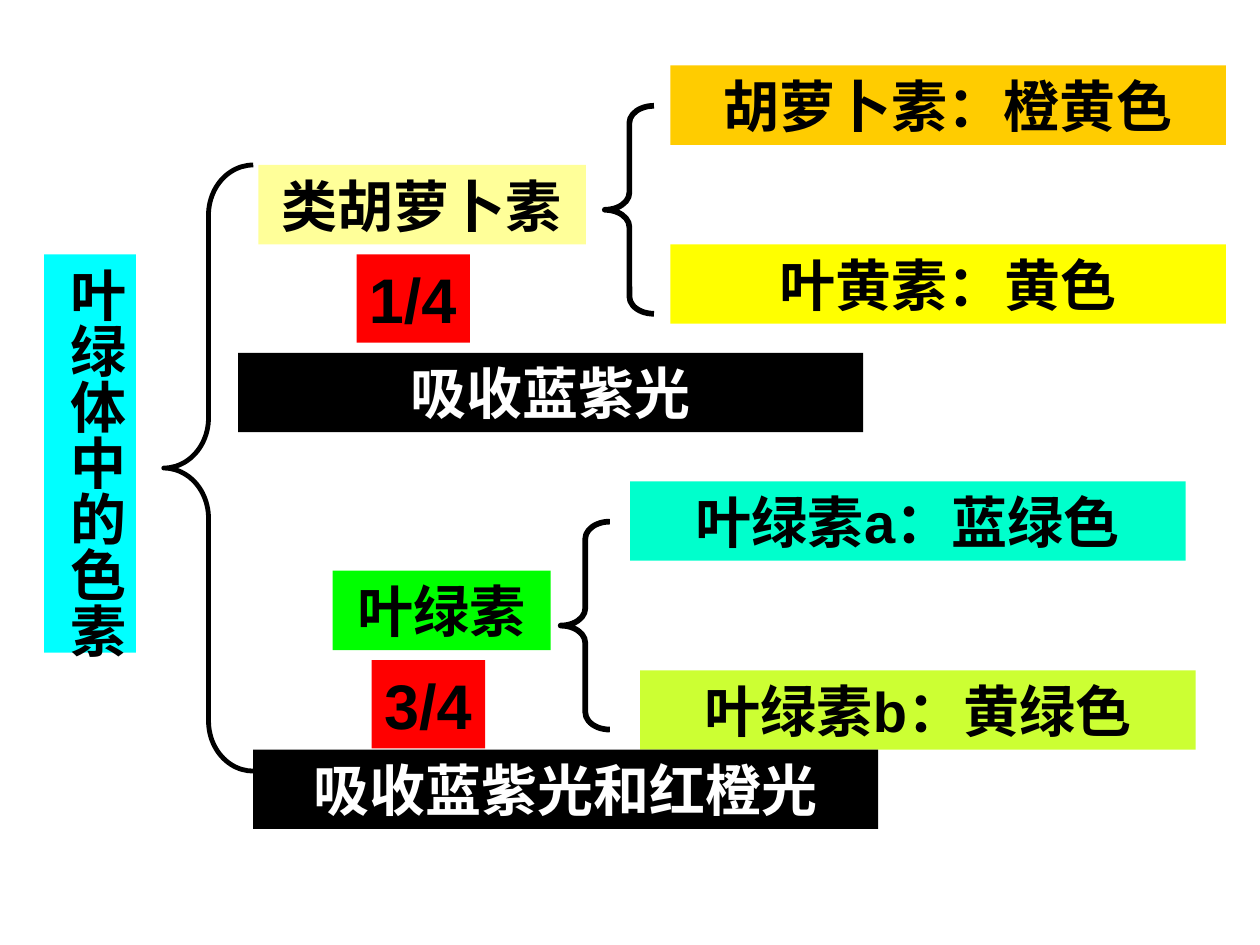
from pptx import Presentation
from pptx.dml.color import RGBColor
from pptx.enum.shapes import MSO_SHAPE as Shape
from pptx.enum.text import MSO_AUTO_SIZE as AutoSize, PP_ALIGN as Align
from pptx.util import Inches, Pt

COLUMNS, ROWS = 100, 75
BLACK, WHITE, RED = "000000", "FFFFFF", "FF0000"


def color(value):
    """Turn a hex string into a colour."""
    return RGBColor.from_string(value)


class PigmentSlide:
    """Hold the style and the current slide, placing elements on a grid."""

    font = "Arial"
    label_size = 32
    label_height = 6.3

    def __init__(self, deck):
        """Add a blank slide and work out the grid cell."""
        self.page = deck.slides.add_slide(deck.slide_layouts[6])
        self.cell_width = deck.slide_width / COLUMNS
        self.cell_height = deck.slide_height / ROWS

    def place(self, left, top, width, height):
        """Convert grid columns and rows to slide lengths."""
        return (round(left * self.cell_width), round(top * self.cell_height),
                round(width * self.cell_width), round(height * self.cell_height))

    def label(self, text, left, top, width, fill, ink=BLACK, height=label_height,
              size=label_size, align=Align.CENTER, wrap=True):
        """Add a filled text box with bold text."""
        box = self.page.shapes.add_textbox(*self.place(left, top, width, height))
        box.fill.solid()
        box.fill.fore_color.rgb = color(fill)
        frame = box.text_frame
        frame.text = text
        frame.word_wrap = wrap
        frame.auto_size = AutoSize.SHAPE_TO_FIT_TEXT
        para = frame.paragraphs[0]
        para.alignment = align
        font = para.runs[0].font
        font.name, font.size, font.bold = self.font, Pt(size), True
        font.color.rgb = color(ink)
        return box

    def vertical_label(self, text, left, top, width, height, fill):
        """Add a label whose text runs from top to bottom."""
        box = self.label(text, left, top, width, fill, height=height,
                         align=Align.LEFT, wrap=False)
        box.text_frame._txBody.bodyPr.set("vert", "eaVert")

    def ratio(self, text, left, top):
        """Add a red box with a share of the pigments."""
        self.label(text, left, top, 9, RED, height=7, size=36,
                   align=Align.LEFT, wrap=False)

    def brace(self, left, top, width, height, curve, weight):
        """Add an unfilled left brace."""
        brace = self.page.shapes.add_shape(
            Shape.LEFT_BRACE, *self.place(left, top, width, height))
        brace.adjustments[0] = curve
        brace.fill.background()
        brace.line.color.rgb = color(BLACK)
        brace.line.width = Pt(weight)
        brace.shadow.inherit = False

    def branch(self, left, top, pigments):
        """Add a small brace with the pigments it splits into."""
        self.brace(left, top + 3.2, 3.9, 16.5, 0.35, 3.25)
        for text, label_left, label_top, fill in pigments:
            self.label(text, label_left, top + label_top, 44.1, fill)


def main():
    """Build and save the deck."""
    deck = Presentation()
    deck.slide_width, deck.slide_height = Inches(10), Inches(7.5)
    slide = PigmentSlide(deck)

    slide.vertical_label("叶绿体中的色素", 3.5, 20.2, 7.3, 31.6, "00FFFF")
    slide.brace(13, 13.1, 7.1, 48.1, 0.56, 2.75)

    slide.label("类胡萝卜素", 20.5, 13.1, 26, "FFFF99")
    slide.branch(48, 5.2, [("胡萝卜素：橙黄色", 53.2, 0, "FFCC00"),
                           ("叶黄素：黄色", 53.2, 14.2, "FFFF00")])
    slide.ratio("1/4", 28.3, 20.2)
    slide.label("吸收蓝紫光", 18.9, 28, 49.6, BLACK, WHITE)

    slide.label("叶绿素", 26.4, 45.3, 17.3, "00FF00")
    slide.branch(44.5, 38.2, [("叶绿素a：蓝绿色", 50, 0, "00FFCC"),
                              ("叶绿素b：黄绿色", 50.8, 15, "CCFF33")])
    slide.ratio("3/4", 29.5, 52.4)
    slide.label("吸收蓝紫光和红橙光", 20.1, 59.5, 49.6, BLACK, WHITE)

    deck.save("out.pptx")


if __name__ == "__main__":
    main()
